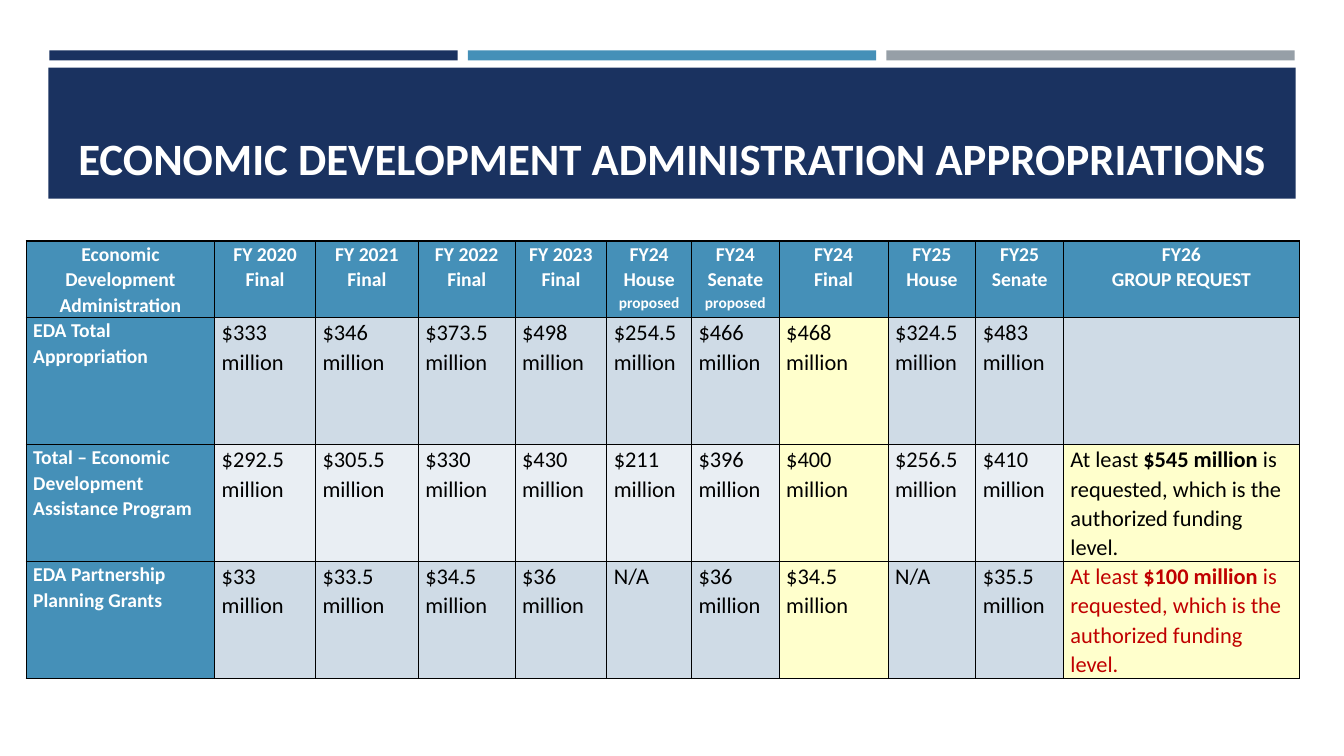
from dataclasses import dataclass

from lxml import etree
from pptx import Presentation
from pptx import util as u
from pptx.dml import color
from pptx.enum import shapes, text
from pptx.oxml import ns

COLORS = {
    "navy": "1A3260",
    "blue": "4590B8",
    "gray": "969FA7",
    "white": "FFFFFF",
    "black": "000000",
    "red": "C00000",
    "band": "CFDBE6",
    "light": "E9EEF3",
    "yellow": "FFFFCC",
}
TITLE = {"name": "Calibri", "size": u.Pt(32), "bold": True}
LABEL = {"name": "Calibri", "size": u.Pt(14), "bold": True}
SMALL = {**LABEL, "size": u.Pt(11)}
BODY = {"name": "Calibri", "size": u.Pt(16), "bold": False}
STRONG = {**BODY, "bold": True}
COLUMN_WIDTHS = [1.87, 1, 1.02, 0.96, 0.91, 0.84, 0.87, 1.08, 0.87, 0.87, 2.34]
ROW_HEIGHTS = [0.76, 1.26, 1.16, 1.16]
FINAL_COLUMN = 7
HEADERS = [
    "Economic Development Administration",
    "FY 2020\nFinal",
    "FY 2021\nFinal",
    "FY 2022\nFinal",
    "FY 2023\nFinal",
    "FY24\nHouse\nproposed",
    "FY24\nSenate\nproposed",
    "FY24\nFinal",
    "FY25\nHouse",
    "FY25\nSenate",
    "FY26\nGROUP REQUEST",
]


@dataclass
class Bar:
    left: float
    top: float
    width: float
    height: float
    fill: str


@dataclass
class Funding:
    label: str
    amounts: list[str]
    request: str
    fill: str
    request_color: str = "black"


BARS = [Bar(0.49 + 4.15 * index, 0.5, 4.05, 0.1, fill)
        for index, fill in enumerate(["navy", "blue", "gray"])]
BARS.append(Bar(0.48, 0.67, 12.37, 1.3, "navy"))

FUNDING = [
    Funding("EDA Total Appropriation",
            ["$333", "$346", "$373.5", "$498", "$254.5", "$466",
             "$468 million", "$324.5", "$483"],
            "", "band"),
    Funding("Total – Economic Development Assistance Program",
            ["$292.5", "$305.5", "$330", "$430", "$211", "$396",
             "$400 million", "$256.5", "$410"],
            "$545 million", "light"),
    Funding("EDA Partnership Planning Grants",
            ["$33", "$33.5", "$34.5", "$36", "N/A", "$36",
             "$34.5", "N/A", "$35.5"],
            "$100 million", "band", "red"),
]


def rgb(name: str) -> color.RGBColor:
    return color.RGBColor.from_string(COLORS[name])


def set_attributes(target, values: dict) -> None:
    for name, value in values.items():
        setattr(target, name, value)


def add_run(paragraph, words: str, font_format: dict, font_color: str) -> None:
    run = paragraph.add_run()
    run.text = words
    set_attributes(run.font, font_format)
    run.font.color.rgb = rgb(font_color)


def add_bar(slide, bar: Bar) -> None:
    shape = slide.shapes.add_shape(
        shapes.MSO_SHAPE.RECTANGLE, u.Inches(bar.left), u.Inches(bar.top),
        u.Inches(bar.width), u.Inches(bar.height))
    shape.shadow.inherit = False
    shape.fill.solid()
    shape.fill.fore_color.rgb = rgb(bar.fill)
    shape.line.fill.background()


def add_title(slide) -> None:
    box = slide.shapes.add_textbox(
        u.Inches(0.64), u.Inches(0.77), u.Inches(12.06), u.Inches(1.11))
    set_attributes(box.text_frame, {
        "word_wrap": True,
        "vertical_anchor": text.MSO_ANCHOR.BOTTOM,
    })
    paragraph = box.text_frame.paragraphs[0]
    paragraph.alignment = text.PP_ALIGN.CENTER
    add_run(paragraph, "ECONOMIC DEVELOPMENT ADMINISTRATION APPROPRIATIONS",
            TITLE, "white")


def style_cell(cell, fill: str) -> None:
    set_attributes(cell, {
        "margin_left": u.Inches(0.07),
        "margin_right": u.Inches(0.07),
        "margin_top": 0,
        "margin_bottom": 0,
    })
    properties = cell._tc.get_or_add_tcPr()
    for side in ("a:lnL", "a:lnR", "a:lnT", "a:lnB"):
        border = etree.SubElement(properties, ns.qn(side), w=str(u.Pt(1)))
        solid = etree.SubElement(border, ns.qn("a:solidFill"))
        etree.SubElement(solid, ns.qn("a:srgbClr"), val=COLORS["black"])
    cell.fill.solid()
    cell.fill.fore_color.rgb = rgb(fill)


def write_lines(cell, words: str, font_format: dict, font_color: str,
                alignment=text.PP_ALIGN.LEFT) -> None:
    for index, line in enumerate(words.split("\n")):
        frame = cell.text_frame
        paragraph = frame.add_paragraph() if index else frame.paragraphs[0]
        set_attributes(paragraph, {"alignment": alignment, "line_spacing": 1.07})
        add_run(paragraph, line, SMALL if line == "proposed" else font_format,
                font_color)


def write_request(cell, funding: Funding) -> None:
    paragraph = cell.text_frame.paragraphs[0]
    set_attributes(paragraph, {"line_spacing": 1.07, "space_after": u.Pt(8)})
    for words, font_format in (
        ("At least ", BODY),
        (funding.request, STRONG),
        (" is requested, which is the authorized funding level.", BODY),
    ):
        add_run(paragraph, words, font_format, funding.request_color)


def write_funding(table, row: int, funding: Funding) -> None:
    label, *amount_cells, request = table.rows[row].cells
    style_cell(label, "blue")
    write_lines(label, funding.label, LABEL, "white")
    for column, (cell, amount) in enumerate(zip(amount_cells, funding.amounts), 1):
        style_cell(cell, "yellow" if column == FINAL_COLUMN else funding.fill)
        needs_unit = amount != "N/A" and not amount.endswith("million")
        write_lines(cell, amount + "\nmillion" if needs_unit else amount,
                    BODY, "black")
    style_cell(request, "yellow" if funding.request else funding.fill)
    if funding.request:
        write_request(request, funding)


def add_funding_table(slide) -> None:
    table = slide.shapes.add_table(
        len(ROW_HEIGHTS), len(COLUMN_WIDTHS), u.Inches(0.26), u.Inches(2.39),
        u.Inches(sum(COLUMN_WIDTHS)), u.Inches(sum(ROW_HEIGHTS))).table
    for column, width in zip(table.columns, COLUMN_WIDTHS):
        column.width = u.Inches(width)
    for row, height in zip(table.rows, ROW_HEIGHTS):
        row.height = u.Inches(height)
    for cell, words in zip(table.rows[0].cells, HEADERS):
        style_cell(cell, "blue")
        write_lines(cell, words, LABEL, "white", text.PP_ALIGN.CENTER)
    for row, funding in enumerate(FUNDING, 1):
        write_funding(table, row, funding)


def main() -> None:
    presentation = Presentation()
    set_attributes(presentation, {
        "slide_width": u.Inches(13.33),
        "slide_height": u.Inches(7.5),
    })
    slide = presentation.slides.add_slide(presentation.slide_layouts[6])
    for bar in BARS:
        add_bar(slide, bar)
    add_title(slide)
    add_funding_table(slide)
    presentation.save("out.pptx")


if __name__ == "__main__":
    main()
